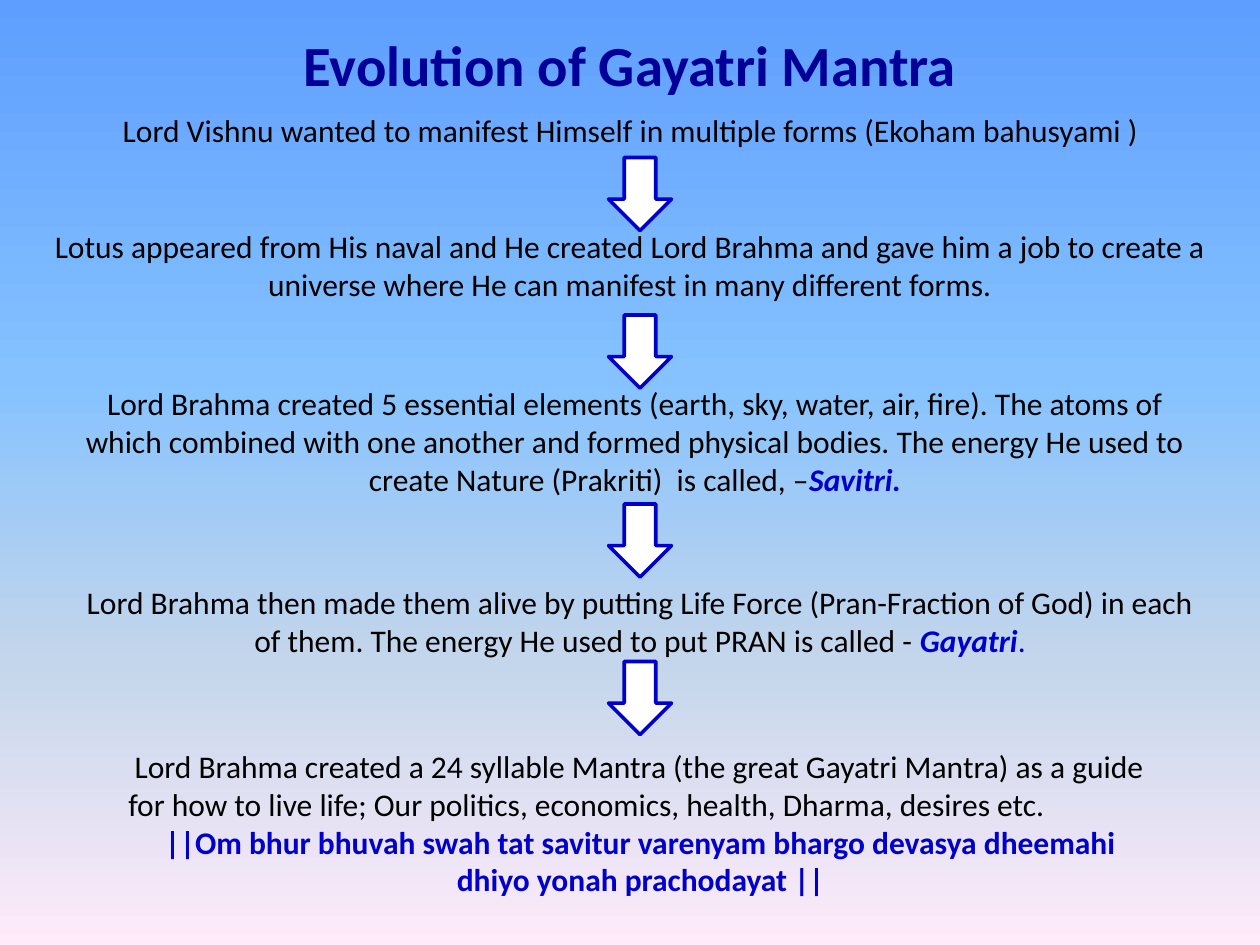
from copy import deepcopy
from dataclasses import dataclass

from pptx import Presentation
from pptx.dml.color import RGBColor
from pptx.enum.shapes import MSO_SHAPE as Shape
from pptx.enum.text import MSO_ANCHOR as Anchor, PP_ALIGN as Align
from pptx.oxml.ns import qn
from pptx.slide import Slide
from pptx.util import Inches, Pt

NAVY = RGBColor(0x00, 0x00, 0x99)
BLUE = RGBColor(0x00, 0x00, 0xCC)
BLACK = RGBColor(0x00, 0x00, 0x00)
WHITE = RGBColor(0xFF, 0xFF, 0xFF)
SKY = [
    (0.0, RGBColor(0x5E, 0x9E, 0xFF)),
    (0.4, RGBColor(0x85, 0xC2, 0xFF)),
    (0.7, RGBColor(0xC4, 0xD6, 0xEB)),
    (1.0, RGBColor(0xFF, 0xEB, 0xFA)),
]
FONT = "Calibri"


@dataclass(frozen=True)
class Phrase:
    text: str
    color: RGBColor = BLACK
    bold: bool = False
    italic: bool = False
    size: float = 18


@dataclass(frozen=True)
class Line:
    phrases: tuple[Phrase, ...]
    align: Align = Align.CENTER
    first_indent: float = 0


@dataclass(frozen=True)
class Step:
    left: float
    top: float
    width: float
    height: float
    lines: tuple[Line, ...]
    anchor: Anchor = Anchor.TOP


STEPS = [
    Step(0.42, 0.83, 9.17, 0.4, (Line((
        Phrase("Lord Vishnu wanted to manifest Himself in multiple forms "
               "(Ekoham bahusyami )"),)),)),
    Step(0, 1.75, 10, 0.71, (Line((
        Phrase("Lotus appeared from His naval and He created Lord Brahma and gave "
               "him a job to create a universe where He can manifest in many "
               "different forms."),)),), Anchor.MIDDLE),
    Step(0.58, 3, 8.92, 1.31, (Line((
        Phrase("Lord Brahma created 5 essential elements (earth, sky, water, air, "
               "fire). The atoms of which combined with one another and formed "
               "physical bodies. The energy He used to create Nature (Prakriti)  "
               "is called, –"),
        Phrase("Savitri.", BLUE, bold=True, italic=True))),)),
    Step(0.58, 4.58, 9, 1.01, (Line((
        Phrase("Lord Brahma then made them alive by putting Life Force "
               "(Pran-Fraction of God) in each of them. The energy He used to put "
               "PRAN is called - "),
        Phrase("Gayatri", BLUE, bold=True, italic=True),
        Phrase(".", BLUE))),)),
    Step(0.92, 5.88, 8.33, 1.62, (
        Line((Phrase("Lord Brahma created a 24 syllable Mantra (the great Gayatri "
                     "Mantra) as a guide for how to live life; Our politics, "
                     "economics, health, Dharma, desires etc."),),
             Align.LEFT, first_indent=0.05),
        Line((Phrase("||Om bhur bhuvah swah tat savitur varenyam bhargo devasya "
                     "dheemahi dhiyo yonah prachodayat ||", BLUE, bold=True),)))),
]
ARROW_TOPS = [1.25, 2.5, 4, 5.25]


def paint_background(slide: Slide) -> None:
    fill = slide.background.fill
    fill.gradient()
    fill.gradient_angle = 270  # top to bottom
    stop_list = slide.element.find(".//" + qn("a:gsLst"))
    while len(stop_list) < len(SKY):
        stop_list.append(deepcopy(stop_list[0]))
    for stop, (position, color) in zip(fill.gradient_stops, SKY):
        stop.position = position
        stop.color.rgb = color


def write_line(paragraph, line: Line) -> None:
    paragraph.alignment = line.align
    if line.first_indent:
        paragraph._p.get_or_add_pPr().set("indent", str(Inches(line.first_indent)))
    for phrase in line.phrases:
        run = paragraph.add_run()
        run.text = phrase.text
        font = run.font
        font.name, font.size = FONT, Pt(phrase.size)
        font.bold, font.italic = phrase.bold, phrase.italic
        font.color.rgb = phrase.color


def add_title(slide: Slide) -> None:
    title = slide.shapes.title
    title.left, title.top = Inches(0.5), Inches(0.17)
    title.width, title.height = Inches(9), Inches(0.67)
    title.text_frame.vertical_anchor = Anchor.MIDDLE
    write_line(title.text_frame.paragraphs[0], Line((
        Phrase("Evolution of Gayatri Mantra", NAVY, bold=True, size=32.4),)))


def add_step(slide: Slide, step: Step) -> None:
    box = slide.shapes.add_textbox(Inches(step.left), Inches(step.top),
                                   Inches(step.width), Inches(step.height))
    frame = box.text_frame
    frame.word_wrap = True
    frame.vertical_anchor = step.anchor
    for index, line in enumerate(step.lines):
        write_line(frame.add_paragraph() if index else frame.paragraphs[0], line)


def add_arrow(slide: Slide, top: float) -> None:
    arrow = slide.shapes.add_shape(Shape.DOWN_ARROW, Inches(4.83), Inches(top),
                                   Inches(0.5), Inches(0.58))
    arrow.shadow.inherit = False
    arrow.fill.solid()
    arrow.fill.fore_color.rgb = WHITE
    arrow.line.color.rgb = BLUE
    arrow.line.width = Pt(2)


def main() -> None:
    deck = Presentation()
    deck.slide_width, deck.slide_height = Inches(10), Inches(7.5)
    slide = deck.slides.add_slide(deck.slide_layouts[5])  # title only

    paint_background(slide)
    add_title(slide)

    # Each step but the last is followed by an arrow
    for index, step in enumerate(STEPS):
        add_step(slide, step)
        if index < len(ARROW_TOPS):
            add_arrow(slide, ARROW_TOPS[index])

    deck.save("out.pptx")


if __name__ == "__main__":
    main()
